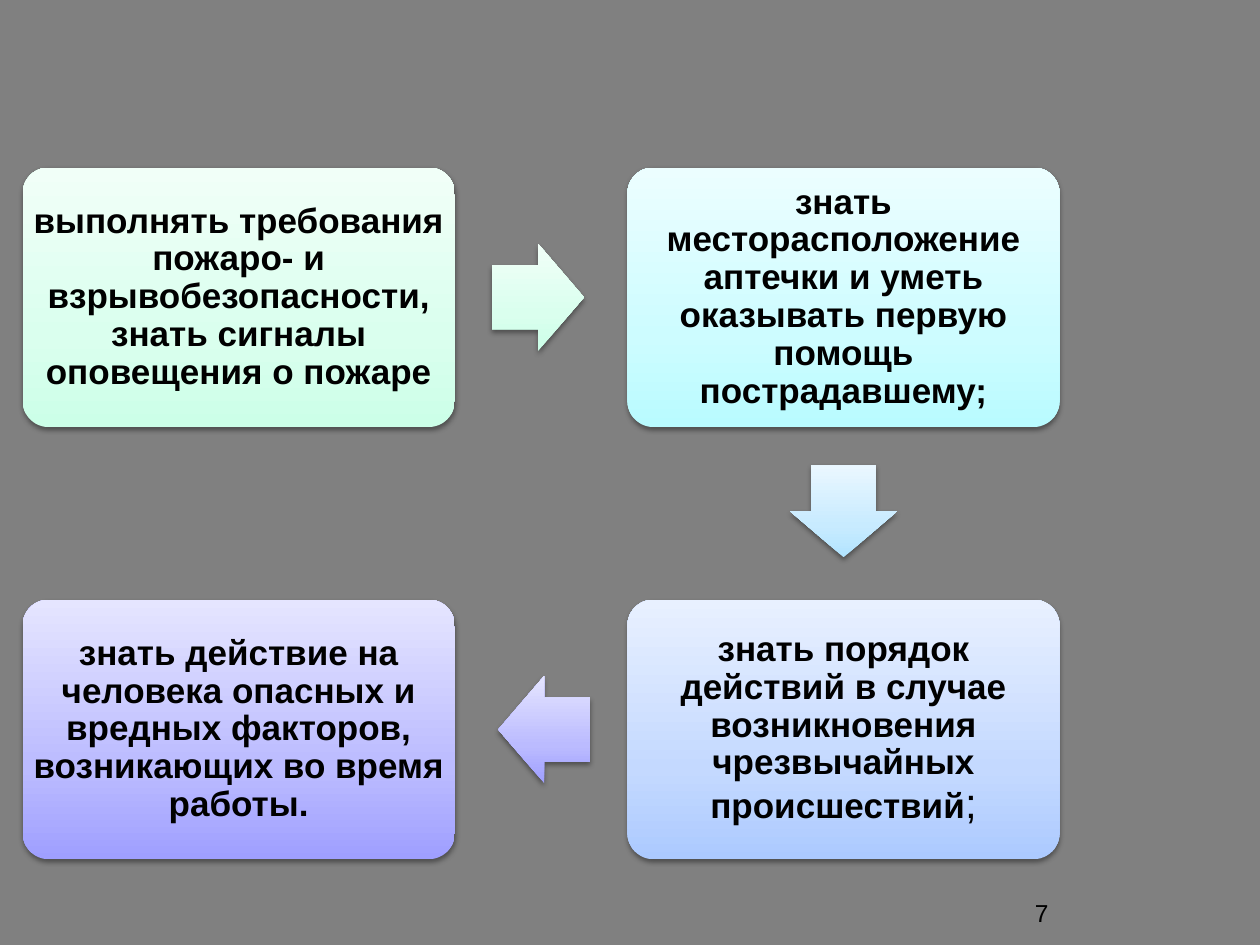
from dataclasses import dataclass

from lxml import etree
from pptx import Presentation
from pptx.dml.color import RGBColor
from pptx.enum.shapes import MSO_SHAPE
from pptx.enum.text import MSO_ANCHOR, PP_ALIGN
from pptx.oxml import parse_xml
from pptx.oxml.ns import nsdecls, qn
from pptx.util import Inches, Pt

ROUNDED, ARROW = MSO_SHAPE.ROUNDED_RECTANGLE, MSO_SHAPE.RIGHT_ARROW
MIDDLE, TOP = MSO_ANCHOR.MIDDLE, MSO_ANCHOR.TOP
CENTER, RIGHT = PP_ALIGN.CENTER, PP_ALIGN.RIGHT

# Two-by-two grid, in inches
GRID_LEFT, GRID_TOP = 0.18, 1.33
COLUMN_PITCH, ROW_PITCH = 4.8, 3.43
CARD_WIDTH, CARD_HEIGHT = 3.43, 2.06
ARROW_WIDTH, ARROW_HEIGHT = 0.73, 0.85

GREEN = ("CCFFE8", "DAFFEE", "F1FFF8")
CYAN = ("B9FBFF", "CDFCFF", "ECFEFF")
SKY = ("B2E4FF", "C8EBFF", "EAF7FF")
BLUE = ("ACCAFF", "C4D9FF", "E8F0FF")
VIOLET = ("9F9FFF", "BBBBFF", "E5E5FF")
STOP_POSITIONS = (0, 35, 100)


@dataclass(frozen=True)
class Card:
    column: int
    row: int
    colors: tuple[str, str, str]
    text: str
    light_ending: str = ""


@dataclass(frozen=True)
class Arrow:
    """Arrow whose centre is given in card pitches from the first card's centre."""
    column: float
    row: float
    rotation: int
    colors: tuple[str, str, str]


CARDS = (
    Card(0, 0, GREEN, "выполнять требования пожаро- и взрывобезопасности, "
                      "знать сигналы оповещения о пожаре"),
    Card(1, 0, CYAN, "знать месторасположение аптечки и уметь оказывать "
                     "первую помощь пострадавшему;"),
    Card(1, 1, BLUE, "знать порядок действий в случае возникновения "
                     "чрезвычайных происшествий", ";"),
    Card(0, 1, VIOLET, "знать действие на человека опасных и вредных факторов, "
                       "возникающих во время работы."),
)
ARROWS = (
    Arrow(0.495, 0, 0, GREEN),
    Arrow(1, 0.495, 90, SKY),
    Arrow(0.505, 1, 180, VIOLET),
)


def color(value: str) -> RGBColor:
    return RGBColor.from_string(value)


def add_glossy_shape(slide, kind, box, colors, adjustments):
    """Add a borderless shape with an upward gradient and a soft shadow."""
    shape = slide.shapes.add_shape(kind, *map(Inches, box))
    for index, value in enumerate(adjustments):
        shape.adjustments[index] = value
    stops = "".join(
        f'<a:gs pos="{position * 1000}"><a:srgbClr val="{value}"/></a:gs>'
        for position, value in zip(STOP_POSITIONS, colors))
    properties = shape.element.spPr
    properties.find(qn("a:prstGeom")).addnext(parse_xml(
        f'<a:gradFill {nsdecls("a")} rotWithShape="0"><a:gsLst>{stops}</a:gsLst>'
        '<a:lin ang="16200000" scaled="0"/></a:gradFill>'))
    shape.line.fill.background()
    shape.shadow.inherit = False
    effects = properties.find(qn("a:effectLst"))
    shadow = etree.SubElement(effects, qn("a:outerShdw"), blurRad=str(Pt(3.1)),
                              dist=str(Pt(1.6)), dir="5400000", rotWithShape="0")
    shade = etree.SubElement(shadow, qn("a:srgbClr"), val="000000")
    etree.SubElement(shade, qn("a:alpha"), val="38000")
    return shape


def add_text(slide, box, text, size, alignment, anchor, margins, bold=False):
    text_box = slide.shapes.add_textbox(*map(Inches, box))
    frame = text_box.text_frame
    frame.word_wrap = True
    frame.vertical_anchor = anchor
    frame.margin_left = frame.margin_right = Inches(margins[0])
    frame.margin_top = frame.margin_bottom = Inches(margins[1])
    paragraph = frame.paragraphs[0]
    paragraph.text = text
    paragraph.alignment = alignment
    font = paragraph.font
    font.name, font.size, font.bold = "Arial", Pt(size), bold
    font.color.rgb = color("000000")
    return paragraph


def add_card(slide, card: Card) -> None:
    box = (GRID_LEFT + card.column * COLUMN_PITCH, GRID_TOP + card.row * ROW_PITCH,
           CARD_WIDTH, CARD_HEIGHT)
    add_glossy_shape(slide, ROUNDED, box, card.colors, (0.1,))
    paragraph = add_text(slide, box, card.text, 20, CENTER, MIDDLE, (0.08, 0.08), True)
    paragraph.line_spacing = 0.9
    paragraph.space_after = Pt(7)
    if card.light_ending:
        run = paragraph.add_run()
        run.text = card.light_ending
        run.font.size, run.font.bold = Pt(24), False


def add_arrow(slide, arrow: Arrow) -> None:
    center_x = GRID_LEFT + CARD_WIDTH / 2 + arrow.column * COLUMN_PITCH
    center_y = GRID_TOP + CARD_HEIGHT / 2 + arrow.row * ROW_PITCH
    box = (center_x - ARROW_WIDTH / 2, center_y - ARROW_HEIGHT / 2,
           ARROW_WIDTH, ARROW_HEIGHT)
    shape = add_glossy_shape(slide, ARROW, box, arrow.colors, (0.6, 0.5))
    shape.rotation = arrow.rotation


def main() -> None:
    presentation = Presentation()
    presentation.slide_width, presentation.slide_height = Inches(10), Inches(7.5)
    slide = presentation.slides.add_slide(presentation.slide_layouts[6])
    background = slide.background.fill
    background.solid()
    background.fore_color.rgb = color("808080")
    for card in CARDS:
        add_card(slide, card)
    for arrow in ARROWS:
        add_arrow(slide, arrow)
    add_text(slide, (6.34, 7.08, 2.08, 0.31), "7", 14, RIGHT, TOP, (0.1, 0.05))
    presentation.save("out.pptx")


if __name__ == "__main__":
    main()
